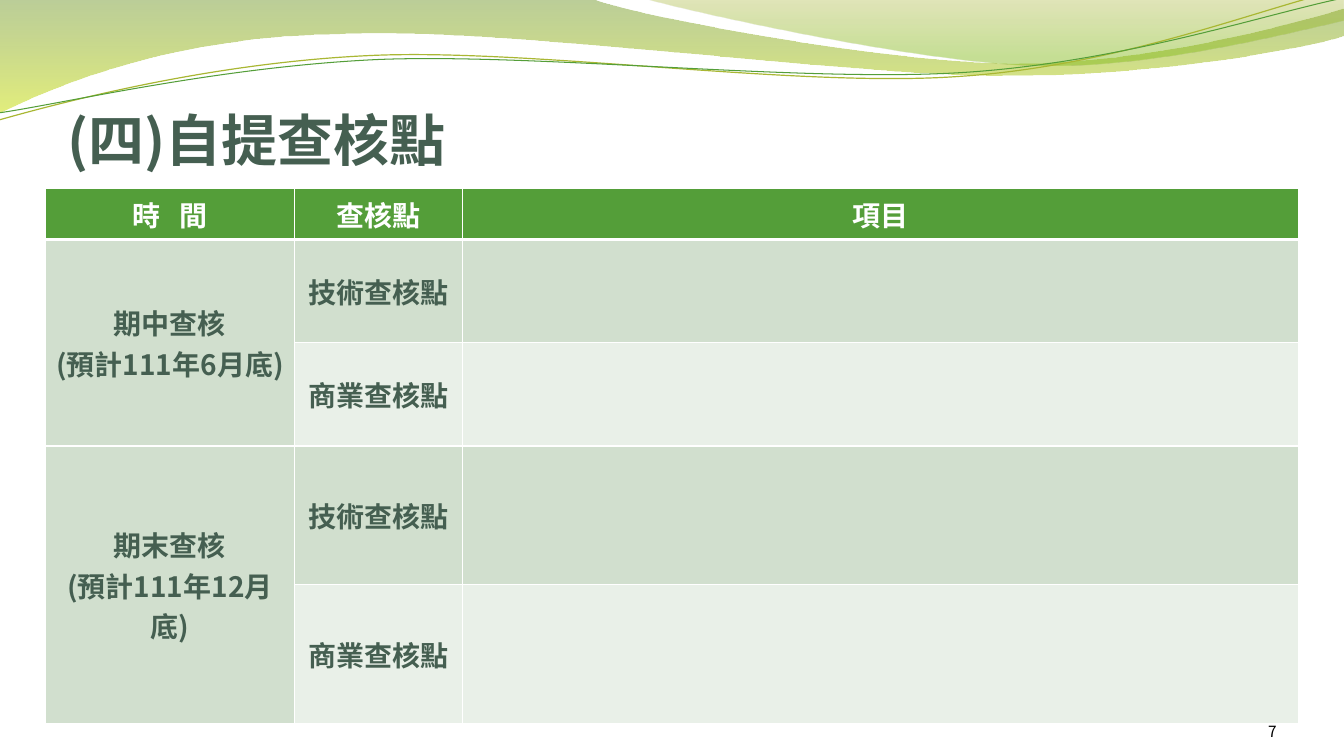
from dataclasses import dataclass
from typing import Optional

from lxml.etree import SubElement
from pptx import Presentation
from pptx.dml.color import RGBColor
from pptx.enum.text import MSO_ANCHOR, MSO_AUTO_SIZE, PP_ALIGN
from pptx.oxml.ns import qn
from pptx.util import Pt

Point = tuple[float, float]


@dataclass(frozen=True)
class Theme:
    heading_font: str = "Noto Sans CJK SC"
    number_font: str = "Noto Sans CJK TC"
    title_size: float = 40
    table_size: float = 20
    number_size: float = 11
    dark: str = "455F51"
    green: str = "549E39"
    olive: str = "A9B733"
    band_dark: str = "D1DFCE"
    band_light: str = "E9F0E8"
    white: str = "FFFFFF"
    black: str = "000000"


THEME = Theme()


@dataclass(frozen=True)
class Style:
    size: float
    color: str
    bold: bool = True
    font: str = THEME.heading_font


@dataclass(frozen=True)
class Run:
    text: str
    spacing: float = 0


@dataclass(frozen=True)
class Stop:
    position: float
    color: str
    opacity: int


@dataclass(frozen=True)
class Wave:
    start: Point
    segments: list[tuple[Point, ...]]
    gradient: Optional[tuple[Stop, Stop]] = None
    line_color: str = ""
    line_width: float = 0


@dataclass(frozen=True)
class Review:
    lines: tuple[str, str]
    row_height: float


WAVES = [
    Wave((0, 0), [
        ((422.64, -0.72),),
        ((456.48, 12.24), (636.48, 45.36), (727.92, 45.36)),
        ((818.64, 45.36), (919.44, 18.72), (959.76, 6.48)),
        ((960.48, 25.92),),
        ((943.92, 31.68), (834.48, 54.72), (715.68, 54)),
        ((596.88, 54), (366.48, 20.16), (246.96, 24.48)),
        ((123.84, 25.92), (43.92, 59.76), (-1.44, 81.36)),
    ], gradient=(Stop(0, "69921C", 45), Stop(1, "CCE10F", 55))),
    Wave((459.36, -0.72), [
        ((488.88, 7.92), (654.48, 44.64), (738, 46.8)),
        ((820.8, 49.68), (923.04, 23.04), (959.76, 15.12)),
        ((959.76, 0),),
    ], gradient=(Stop(0, "9BAA1A", 30), Stop(0.8, "81BA16", 45))),
    Wave((-0.72, 85.68), [
        ((45.36, 72.72), (151.2, 44.64), (265.68, 39.6)),
        ((379.44, 34.56), (568.08, 62.64), (683.28, 54.72)),
        ((799.2, 47.52), (900.72, 5.76), (957.6, -7.2)),
    ], line_color=THEME.olive, line_width=0.85),
    Wave((-0.72, 80.64), [
        ((44.64, 74.16), (156.96, 47.52), (271.44, 42.48)),
        ((386.64, 38.16), (573.12, 59.04), (687.6, 51.84)),
        ((802.08, 44.64), (903.6, 10.08), (959.76, -1.44)),
    ], line_color=THEME.green, line_width=0.75),
]

HEADINGS = [[Run("時"), Run(" ", 9), Run("間")], [Run("查核點")], [Run("項目")]]
REVIEWS = [
    Review(("期中查核", "(預計111年6月底)"), 73.8),
    Review(("期末查核", "(預計111年12月底)"), 99.1),
]
CHECKPOINTS = [("技術查核點", THEME.band_dark), ("商業查核點", THEME.band_light)]
COLUMN_WIDTHS = [178, 120, 597]
HEADER_HEIGHT = 36.2


def add_run(paragraph, run: Run, style: Style) -> None:
    piece = paragraph.add_run()
    piece.text = run.text
    font = piece.font
    font.name, font.size, font.bold = style.font, Pt(style.size), style.bold
    font.color.rgb = RGBColor.from_string(style.color)
    properties = piece._r.get_or_add_rPr()
    properties.set("lang", "zh-TW")
    if run.spacing:
        properties.set("spc", str(round(run.spacing * 100)))
    SubElement(properties, qn("a:ea")).set("typeface", style.font)


def set_frame(frame, insets: tuple[float, ...]) -> None:
    frame.word_wrap = True
    frame.auto_size = MSO_AUTO_SIZE.NONE
    frame.vertical_anchor = MSO_ANCHOR.BOTTOM
    (frame.margin_left, frame.margin_top,
     frame.margin_right, frame.margin_bottom) = map(Pt, insets)


def place(shape, left: float, top: float, width: float, height: float) -> None:
    shape.left, shape.top, shape.width, shape.height = map(Pt, (left, top, width, height))


def bend(ribbon, segments: list[tuple[Point, ...]]) -> None:
    sides = iter(list(ribbon._element.spPr.iter(qn("a:lnTo"))))
    for segment in segments:
        group = [next(sides) for _ in segment]
        if len(group) == 3:
            curve = group[0].makeelement(qn("a:cubicBezTo"))
            group[0].addprevious(curve)
            for side in group:
                curve.append(side[0])
                side.getparent().remove(side)


def draw_wave(shapes, wave: Wave) -> None:
    outline = [wave.start] + [point for segment in wave.segments for point in segment]
    corners = [(Pt(x), Pt(y)) for x, y in outline]
    builder = shapes.build_freeform(*corners[0], scale=1.0)
    builder.add_line_segments(corners[1:], close=False)
    ribbon = builder.convert_to_shape()
    bend(ribbon, wave.segments)
    ribbon.shadow.inherit = False
    if wave.gradient is None:
        ribbon.fill.background()
        ribbon.line.color.rgb = RGBColor.from_string(wave.line_color)
        ribbon.line.width = Pt(wave.line_width)
        return
    ribbon.line.fill.background()
    ribbon.fill.gradient()
    ribbon.fill.gradient_angle = 270
    for target, stop in zip(ribbon.fill.gradient_stops, wave.gradient):
        target.position = stop.position
        target.color.rgb = RGBColor.from_string(stop.color)
    for color, stop in zip(ribbon._element.spPr.iter(qn("a:srgbClr")), wave.gradient):
        SubElement(color, qn("a:alpha")).set("val", str(stop.opacity * 1000))


def format_cell(cell, fill: str, top: float = 1, bottom: float = 1) -> None:
    properties = cell._tc.get_or_add_tcPr()
    for side, width in (("L", 1), ("R", 1), ("T", top), ("B", bottom)):
        border = SubElement(properties, qn(f"a:ln{side}"), w=str(Pt(width)))
        solid = SubElement(border, qn("a:solidFill"))
        SubElement(solid, qn("a:srgbClr"), val=THEME.white)
    cell.fill.solid()
    cell.fill.fore_color.rgb = RGBColor.from_string(fill)


def write_cell(cell, lines: list[list[Run]], color: str, narrow: bool = True) -> None:
    cell.vertical_anchor = MSO_ANCHOR.MIDDLE
    if narrow:
        cell.margin_left = cell.margin_right = Pt(5)
        cell.margin_top = cell.margin_bottom = Pt(0)
    frame = cell.text_frame
    for index, line in enumerate(lines):
        paragraph = frame.add_paragraph() if index else frame.paragraphs[0]
        paragraph.alignment = PP_ALIGN.CENTER
        for run in line:
            add_run(paragraph, run, Style(THEME.table_size, color))


def draw_table(shapes) -> None:
    heights = [HEADER_HEIGHT] + [r.row_height for r in REVIEWS for _ in CHECKPOINTS]
    table = shapes.add_table(
        len(heights), len(COLUMN_WIDTHS), Pt(32.4), Pt(134.8),
        Pt(sum(COLUMN_WIDTHS)), Pt(sum(heights))).table
    for column, width in zip(table.columns, COLUMN_WIDTHS):
        column.width = Pt(width)
    for row, height in zip(table.rows, heights):
        row.height = Pt(height)
    for column, heading in enumerate(HEADINGS):
        format_cell(table.cell(0, column), THEME.green, bottom=3)
        write_cell(table.cell(0, column), [heading], THEME.white, narrow=column < 2)
    for number, review in enumerate(REVIEWS):
        first = 1 + number * len(CHECKPOINTS)
        for row, (checkpoint, band) in enumerate(CHECKPOINTS, first):
            for column in range(len(COLUMN_WIDTHS)):
                fill = band if column else THEME.band_dark
                format_cell(table.cell(row, column), fill, top=3 if row == 1 else 1)
            write_cell(table.cell(row, 1), [[Run(checkpoint)]], THEME.dark)
        period = table.cell(first, 0)
        period.merge(table.cell(first + len(CHECKPOINTS) - 1, 0))
        write_cell(period, [[Run(line)] for line in review.lines], THEME.dark)


def main() -> None:
    deck = Presentation()
    deck.slide_width, deck.slide_height = Pt(960), Pt(540)
    slide = deck.slides.add_slide(deck.slide_layouts[5])
    for wave in WAVES:
        draw_wave(slide.shapes, wave)
    title = slide.shapes.title
    place(title, 48, 33.5, 864, 90)
    set_frame(title.text_frame, (0, 3.6, 0, 0))
    heading = title.text_frame.paragraphs[0]
    heading.alignment = PP_ALIGN.LEFT
    add_run(heading, Run("(四)自提查核點"), Style(THEME.title_size, THEME.dark))
    draw_table(slide.shapes)
    page = slide.shapes.add_textbox(Pt(832), Pt(500.4), Pt(80), Pt(28.8))
    set_frame(page.text_frame, (0, 0, 0, 0))
    number = page.text_frame.paragraphs[0]
    number.alignment = PP_ALIGN.RIGHT
    add_run(number, Run("7"), Style(THEME.number_size, THEME.black, False, THEME.number_font))
    deck.save("out.pptx")


if __name__ == "__main__":
    main()
